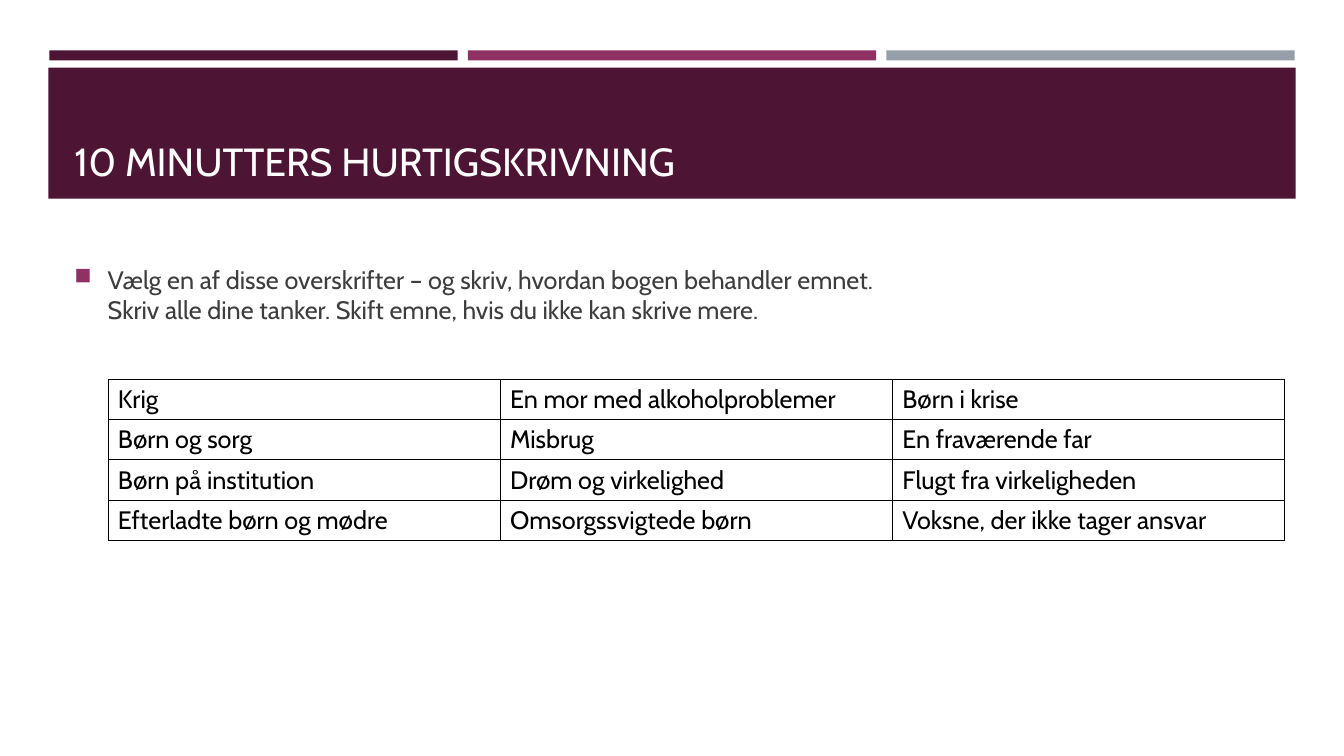
from lxml import etree
from pptx import Presentation
from pptx.dml.color import RGBColor
from pptx.enum.shapes import MSO_SHAPE
from pptx.enum.text import MSO_ANCHOR
from pptx.oxml.ns import qn
from pptx.util import Pt

EMU_PER_PX = 9144
RECTANGLE = MSO_SHAPE.RECTANGLE
TOP = MSO_ANCHOR.TOP
BOTTOM = MSO_ANCHOR.BOTTOM

PLUM = RGBColor(0x4D, 0x14, 0x34)
MAGENTA = RGBColor(0x90, 0x31, 0x63)
GREY = RGBColor(0x96, 0x9F, 0xA7)
CHARCOAL = RGBColor(0x3D, 0x3D, 0x3D)
WHITE = RGBColor(0xFF, 0xFF, 0xFF)
BLACK = RGBColor(0x00, 0x00, 0x00)

TITLE_FORMAT = {"name": "Cabin", "size": Pt(28)}
BODY_FORMAT = {"name": "Cabin", "size": Pt(18)}

TITLE = "10 MINUTTERS HURTIGSKRIVNING"
TASK = (
    "Vælg en af disse overskrifter – og skriv, hvordan bogen behandler emnet. \v"
    "Skriv alle dine tanker. Skift emne, hvis du ikke kan skrive mere."
)
TOPICS = [
    ["Krig", "En mor med alkoholproblemer", "Børn i krise"],
    ["Børn og sorg", "Misbrug", "En fraværende far"],
    ["Børn på institution", "Drøm og virkelighed", "Flugt fra virkeligheden"],
    ["Efterladte børn og mødre", "Omsorgssvigtede børn", "Voksne, der ikke tager ansvar"],
]


def px(length):
    return length * EMU_PER_PX


def add_child(parent, tag, **attributes):
    return etree.SubElement(parent, qn(tag), attributes)


def add_bar(page, left, top, width, height, color):
    bar = page.shapes.add_shape(RECTANGLE, px(left), px(top), px(width), px(height))
    bar.shadow.inherit = False
    bar.fill.solid()
    bar.fill.fore_color.rgb = color
    bar.line.fill.background()


def write_text(para, text, font_format, color):
    para.text = text
    for span in para.runs:
        for name, value in font_format.items():
            setattr(span.font, name, value)
        span.font.color.rgb = color


def add_text(page, left, top, width, height, text, font_format, color, anchor):
    box = page.shapes.add_textbox(px(left), px(top), px(width), px(height))
    frame = box.text_frame
    frame.word_wrap = True
    frame.vertical_anchor = anchor
    para = frame.paragraphs[0]
    write_text(para, text, font_format, color)
    return para


def add_bullet(para, indent, color):
    properties = para._p.get_or_add_pPr()
    properties.set("marL", str(px(indent)))
    properties.set("indent", str(-px(indent)))
    bullet_color = add_child(properties, "a:buClr")
    add_child(bullet_color, "a:srgbClr", val=str(color))
    add_child(properties, "a:buSzPct", val="92000")
    add_child(properties, "a:buChar", char="■")


def add_borders(cell, color):
    properties = cell._tc.get_or_add_tcPr()
    for index, side in enumerate(("a:lnL", "a:lnR", "a:lnT", "a:lnB")):
        border = add_child(properties, side, w=str(Pt(0.5)))
        fill = add_child(border, "a:solidFill")
        add_child(fill, "a:srgbClr", val=str(color))
        properties.insert(index, border)


def add_topic_table(page, left, top, column_width, row_height, topics):
    rows, columns = len(topics), len(topics[0])
    table = page.shapes.add_table(
        rows, columns, px(left), px(top), px(column_width * columns), px(row_height * rows)
    ).table
    table.first_row = False
    table.horz_banding = False
    for row, row_topics in enumerate(topics):
        for column, topic in enumerate(row_topics):
            cell = table.cell(row, column)
            cell.fill.background()
            add_borders(cell, BLACK)
            write_text(cell.text_frame.paragraphs[0], topic, BODY_FORMAT, BLACK)


def main():
    deck = Presentation()
    deck.slide_width, deck.slide_height = px(1333), px(750)
    page = deck.slides.add_slide(deck.slide_layouts[6])

    for index, color in enumerate((PLUM, MAGENTA, GREY)):
        add_bar(page, 49 + 415 * index, 50, 405, 10, color)
    add_bar(page, 48, 67, 1237, 130, PLUM)
    add_text(page, 64, 77, 1206, 111, TITLE, TITLE_FORMAT, WHITE, BOTTOM)

    task = add_text(page, 64, 257, 1206, 72, TASK, BODY_FORMAT, CHARCOAL, TOP)
    add_bullet(task, 33, MAGENTA)
    add_topic_table(page, 107, 376, 389, 40, TOPICS)

    deck.save("out.pptx")


if __name__ == "__main__":
    main()
